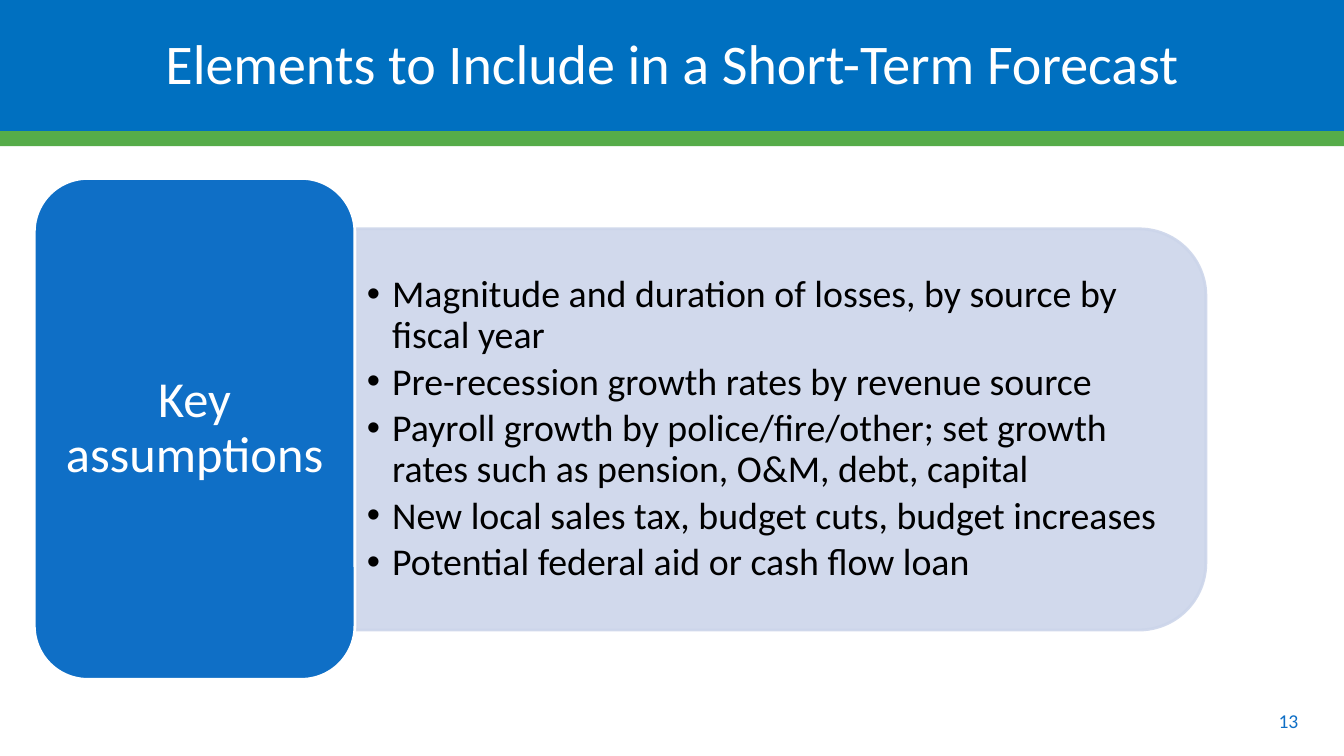
from dataclasses import dataclass

from lxml.etree import SubElement
from pptx import Presentation
from pptx.dml.color import RGBColor
from pptx.enum.shapes import MSO_SHAPE as Preset
from pptx.enum.text import MSO_ANCHOR as Anchor, MSO_AUTO_SIZE as AutoSize, PP_ALIGN as Align
from pptx.oxml.ns import qn
from pptx.util import Inches, Pt


@dataclass(frozen=True)
class Theme:
    font: str = "Calibri"
    banner: str = "0070C0"
    stripe: str = "56AC49"
    accent: str = "0F6FC6"
    panel: str = "CCD5EA"
    light: str = "FFFFFF"
    dark: str = "000000"
    title_size: int = 40
    label_size: int = 36
    list_size: int = 27
    number_size: int = 14


THEME = Theme()
WIDTH, HEIGHT = 13.33, 7.5
ASSUMPTIONS = [
    "Magnitude and duration of losses, by source by fiscal year",
    "Pre-recession growth rates by revenue source",
    "Payroll growth by police/fire/other; set growth rates such as pension, O&M, debt, capital",
    "New local sales tax, budget cuts, budget increases",
    "Potential federal aid or cash flow loan",
]


def place(shape, left, top, width, height):
    shape.left, shape.top = Inches(left), Inches(top)
    shape.width, shape.height = Inches(width), Inches(height)


def paint(shape, color):
    shape.fill.solid()
    shape.fill.fore_color.rgb = RGBColor.from_string(color)


def add_block(page, preset, box, color, outline=None):
    block = page.shapes.add_shape(preset, *map(Inches, box))
    block.shadow.inherit = False
    paint(block, color)
    if outline:
        block.line.color.rgb = RGBColor.from_string(outline)
        block.line.width = Pt(2)
    else:
        block.line.fill.background()
    return block


def set_frame(frame, insets):
    """Centre the text vertically; insets are left, top, right, bottom in inches."""
    frame.word_wrap = True
    frame.auto_size = AutoSize.NONE
    frame.vertical_anchor = Anchor.MIDDLE
    (frame.margin_left, frame.margin_top,
     frame.margin_right, frame.margin_bottom) = map(Inches, insets)


def style(para, size, color, align=Align.CENTER, spacing=0.9):
    para.alignment = align
    para.line_spacing = spacing
    for span in para.runs:
        span.font.name = THEME.font
        span.font.size = Pt(size)
        span.font.color.rgb = RGBColor.from_string(color)


def add_bullet(para, indent):
    properties = para._p.get_or_add_pPr()
    properties.set("marL", str(Inches(indent)))
    properties.set("indent", str(-Inches(indent)))
    SubElement(properties, qn("a:buChar")).set("char", "•")


def fade(shape, percent):
    """Make the fill and line colours opaque only to the given percentage."""
    for color in shape._element.spPr.iter(qn("a:srgbClr")):
        SubElement(color, qn("a:alpha")).set("val", str(percent * 1000))


def fill_banner(page, title, left, top, width, height):
    stripe_height = 0.15
    add_block(page, Preset.RECTANGLE, (left, top + height, width, stripe_height), THEME.stripe)
    banner = page.shapes.title
    place(banner, left, top, width, height)
    paint(banner, THEME.banner)
    banner.text_frame.text = title
    set_frame(banner.text_frame, (0.1, 0.1, 0.1, 0.05))
    style(banner.text_frame.paragraphs[0], THEME.title_size, THEME.light)


def add_label(page, text, left, top, width, height):
    label = add_block(page, Preset.ROUNDED_RECTANGLE, (left, top, width, height),
                      THEME.accent, THEME.light)
    label.text_frame.text = text
    set_frame(label.text_frame, (0.15, 0.07, 0.15, 0.07))
    para = label.text_frame.paragraphs[0]
    style(para, THEME.label_size, THEME.light)
    para.space_after = Pt(12)


def fill_panel(page, items, left, top, width, height):
    """Draw the panel, rounded on its right side, with the bulleted list on it."""
    turned = (left + (width - height) / 2, top + (height - width) / 2, height, width)
    panel = add_block(page, Preset.ROUND_2_SAME_RECTANGLE, turned, THEME.panel, THEME.panel)
    panel.rotation = 90
    fade(panel, 90)

    body = page.placeholders[1]
    panel._element.addnext(body._element)
    place(body, left, top + 0.2, width - 0.2, height - 0.4)
    frame = body.text_frame
    frame.text = "\n".join(items)
    set_frame(frame, (0.11, 0.06, 0.11, 0.06))
    for para in frame.paragraphs:
        para.level = 1
        add_bullet(para, 0.25)
        style(para, THEME.list_size, THEME.dark, Align.LEFT)
        para.space_before = Pt(0)
        para.space_after = Pt(4)


def add_page_number(page, number, left, top, width, height):
    box = page.shapes.add_textbox(*map(Inches, (left, top, width, height)))
    box.text_frame.text = str(number)
    set_frame(box.text_frame, (0.1, 0.05, 0.1, 0.05))
    style(box.text_frame.paragraphs[0], THEME.number_size, THEME.accent, spacing=1.0)


def main():
    deck = Presentation()
    deck.slide_width, deck.slide_height = Inches(WIDTH), Inches(HEIGHT)
    page = deck.slides.add_slide(deck.slide_layouts[1])
    fill_banner(page, "Elements to Include in a Short-Term Forecast", 0, -0.03, WIDTH, 1.33)
    fill_panel(page, ASSUMPTIONS, 3.53, 2.27, 8.43, 3.98)
    add_label(page, "Key assumptions", 0.34, 1.77, 3.18, 4.97)
    add_page_number(page, 13, 12.28, 6.95, 1, 0.4)
    deck.save("out.pptx")


if __name__ == "__main__":
    main()
